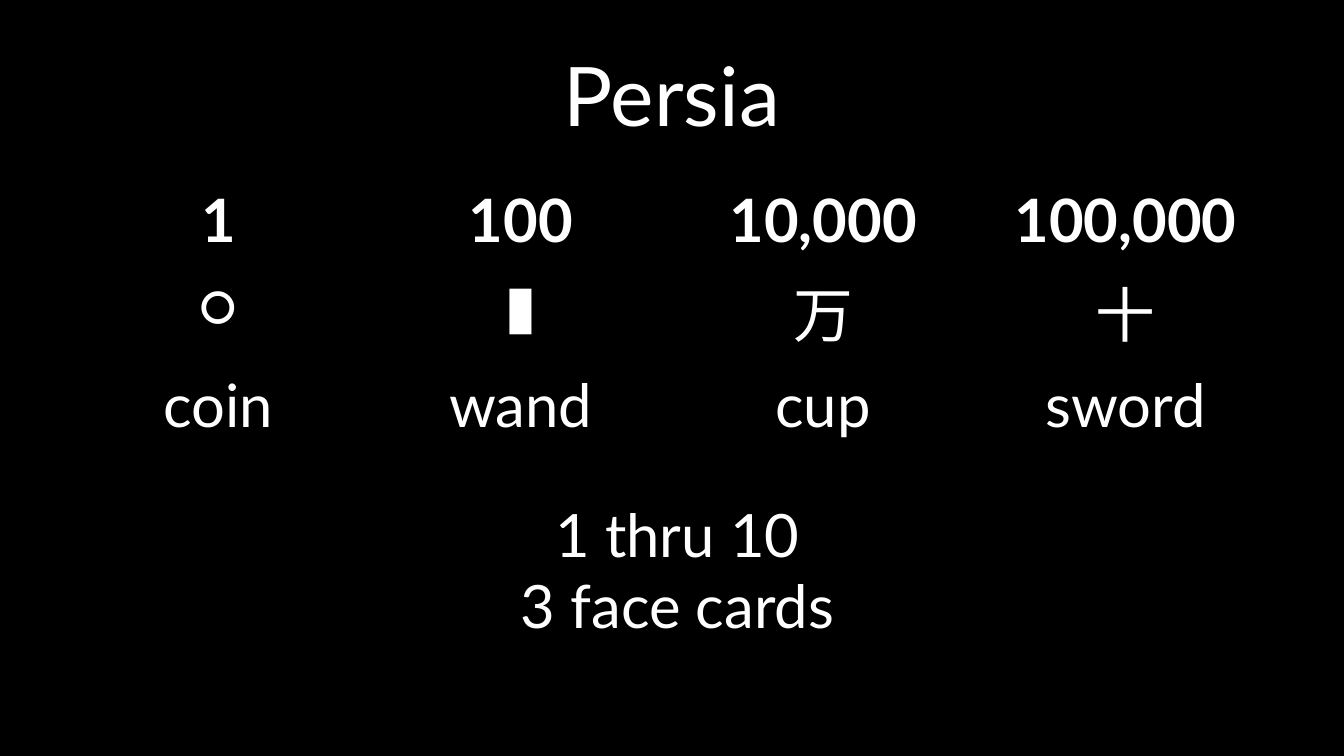
from dataclasses import dataclass

from pptx import Presentation
from pptx import util as u
from pptx.dml.color import RGBColor
from pptx.enum import text


@dataclass(frozen=True)
class Theme:
    font: str = "Lato"
    background: RGBColor = RGBColor(0, 0, 0)
    ink: RGBColor = RGBColor(255, 255, 255)
    title_size: int = 44
    body_size: int = 32


@dataclass(frozen=True)
class Box:
    left: float
    top: float
    width: float
    height: float

    def lengths(self) -> tuple:
        return tuple(u.Pt(value) for value in (self.left, self.top, self.width, self.height))


@dataclass(frozen=True)
class Suit:
    value: str
    symbol: str
    name: str


THEME = Theme()
NO_GRID_STYLE = "{2D5ABB26-0587-4C30-8999-92F81FD0307C}"
TITLE_BOX = Box(36, 16.5, 648, 67.5)
TABLE_BOX = Box(36, 94.5, 648, 118)
DECK_BOX = Box(132, 263, 462, 85)
SUITS = (
    Suit("1", "○", "coin"),
    Suit("100", "▮", "wand"),
    Suit("10,000", "万", "cup"),
    Suit("100,000", "十", "sword"),
)
DECK_LINES = ("1 thru 10", "3 face cards")


def write_lines(frame, lines: tuple, size: int, bold: bool = False) -> None:
    """Fill the first paragraph, centred, with line breaks between the lines."""
    paragraph = frame.paragraphs[0]
    paragraph.alignment = text.PP_ALIGN.CENTER
    for index, line in enumerate(lines):
        if index:
            paragraph.add_line_break()
        run = paragraph.add_run()
        run.text = line
        run.font.name = THEME.font
        run.font.size = u.Pt(size)
        run.font.bold = bold
        run.font.color.rgb = THEME.ink


def add_title(slide, title: str) -> None:
    shape = slide.shapes.title
    shape.left, shape.top, shape.width, shape.height = TITLE_BOX.lengths()
    shape.text_frame.vertical_anchor = text.MSO_ANCHOR.MIDDLE
    write_lines(shape.text_frame, (title,), THEME.title_size)


def add_suit_table(slide, suits: tuple) -> None:
    """Draw one column per suit, with an empty row at the foot."""
    rows = [
        [suit.value for suit in suits],
        [suit.symbol for suit in suits],
        [suit.name for suit in suits],
        [""] * len(suits),
    ]
    shape = slide.shapes.add_table(len(rows), len(suits), *TABLE_BOX.lengths())
    table = shape.table
    table.first_row = table.horz_banding = False
    table._tbl.tblPr.find("{*}tableStyleId").text = NO_GRID_STYLE
    for row_index, row in enumerate(rows):
        for column_index, content in enumerate(row):
            cell = table.cell(row_index, column_index)
            cell.fill.solid()
            cell.fill.fore_color.rgb = THEME.background
            if content:
                write_lines(cell.text_frame, (content,), THEME.body_size, bold=row_index == 0)


def add_deck_text(slide, lines: tuple) -> None:
    frame = slide.shapes.add_textbox(*DECK_BOX.lengths()).text_frame
    frame.word_wrap = True
    frame.auto_size = text.MSO_AUTO_SIZE.SHAPE_TO_FIT_TEXT
    write_lines(frame, lines, THEME.body_size)


def main() -> None:
    presentation = Presentation()
    presentation.slide_width, presentation.slide_height = u.Pt(720), u.Pt(405)
    slide = presentation.slides.add_slide(presentation.slide_layouts[5])
    slide.background.fill.solid()
    slide.background.fill.fore_color.rgb = THEME.background
    add_title(slide, "Persia")
    add_suit_table(slide, SUITS)
    add_deck_text(slide, DECK_LINES)
    presentation.save("out.pptx")


if __name__ == "__main__":
    main()
